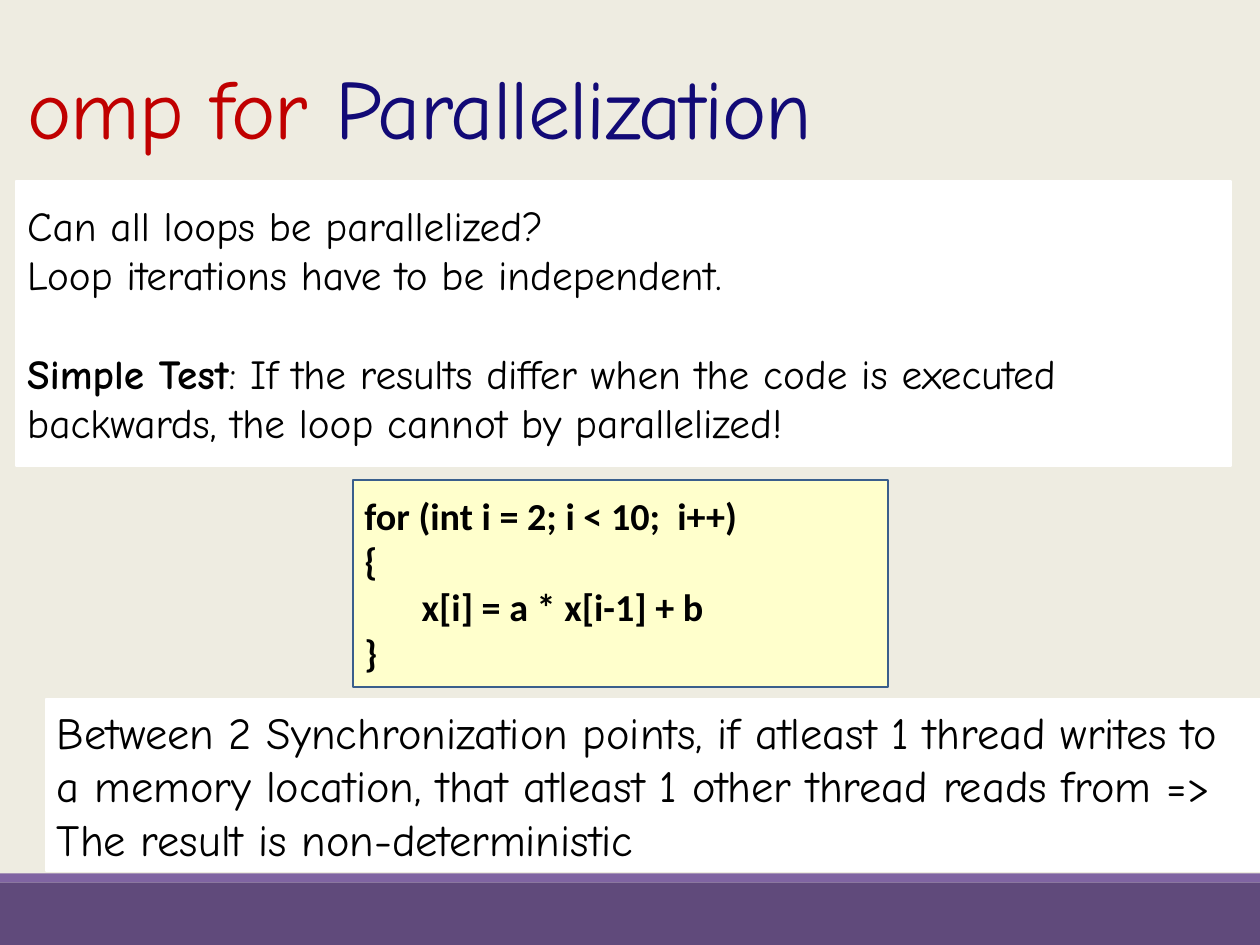
"""Build the slide on loops that omp for can parallelize."""
from pptx import Presentation
from pptx.dml.color import RGBColor
from pptx.enum.shapes import MSO_SHAPE
from pptx.enum.text import MSO_ANCHOR, MSO_AUTO_SIZE, PP_ALIGN
from pptx.util import Inches, Pt

RECT = MSO_SHAPE.RECTANGLE
MIDDLE = MSO_ANCHOR.MIDDLE
BOTTOM = MSO_ANCHOR.BOTTOM
LEFT = PP_ALIGN.LEFT
NO_FIT = MSO_AUTO_SIZE.NONE

CREAM = RGBColor(0xEE, 0xEC, 0xE1)
PURPLE = RGBColor(0x60, 0x4A, 0x7B)
LILAC = RGBColor(0x80, 0x64, 0xA2)
RED = RGBColor(0xC0, 0x00, 0x00)
NAVY = RGBColor(0x12, 0x0A, 0x76)
YELLOW = RGBColor(0xFF, 0xFF, 0xCC)
BLUE = RGBColor(0x3A, 0x5F, 0x8C)
WHITE = RGBColor(0xFF, 0xFF, 0xFF)
BLACK = RGBColor(0x00, 0x00, 0x00)

COMIC = "Comic Neue"
CODE = "Calibri"
CM = 1 / 2.54
WIDTH = 28 * CM
HEIGHT = 21 * CM


def style(run, face, size, color, bold=False):
    font = run.font
    font.name, font.size, font.bold = face, Pt(size), bold
    font.color.rgb = color


def add_box(slide, left, top, width, height, fill, line=None):
    box = slide.shapes.add_shape(
        RECT, Inches(left), Inches(top), Inches(width), Inches(height))
    box.shadow.inherit = False
    box.fill.solid()
    box.fill.fore_color.rgb = fill
    if line is None:
        box.line.fill.background()
    else:
        box.line.color.rgb = line
        box.line.width = Pt(1.25)
    return box


def add_text(box, lines, face, size, bold=False):
    frame = box.text_frame
    frame.word_wrap = True
    frame.vertical_anchor = MIDDLE
    frame.text = "\n".join(lines)
    for para in frame.paragraphs:
        para.alignment = LEFT
        for run in para.runs:
            style(run, face, size, BLACK, bold)
    return frame.paragraphs


def set_title(slide):
    title = slide.shapes.title
    title.left, title.top = Inches(0.14), Inches(0.24)
    title.width, title.height = Inches(9.95), Inches(1.18)
    frame = title.text_frame
    frame.auto_size = NO_FIT
    frame.vertical_anchor = BOTTOM
    para = frame.paragraphs[0]
    para.alignment = LEFT
    para.line_spacing = 0.85
    for text, color in (("omp for", RED), (" Parallelization", NAVY)):
        run = para.add_run()
        run.text = text
        style(run, COMIC, 52.9, color)
        run.font._element.set("spc", "-60")


def add_test(slide):
    box = add_box(slide, 0.14, 1.58, 10.63, 2.5, WHITE, WHITE)
    paras = add_text(box, [
        "Can all loops be parallelized?",
        "Loop iterations have to be independent.",
        "Simple Test",
    ], COMIC, 26)
    test = paras[-1]
    test.space_before = Pt(31)
    test.runs[0].font.bold = True
    rest = test.add_run()
    rest.text = (": If the results differ when the code is executed "
                 "backwards, the loop cannot by parallelized!")
    style(rest, COMIC, 26, BLACK)


def add_code(slide):
    box = add_box(slide, 3.09, 4.2, 4.68, 1.81, YELLOW, BLUE)
    paras = add_text(box, [
        "for (int i = 2; i < 10;  i++)",
        "{",
        "x[i] = a * x[i-1] + b",
        "}",
    ], CODE, 24, True)
    props = paras[2]._p.get_or_add_pPr()
    props.set("marL", str(Inches(0.5)))
    props.set("indent", "0")


def add_rule(slide):
    box = add_box(slide, 0.4, 6.12, 10.63, 1.5, WHITE, WHITE)
    add_text(box, [
        "Between 2 Synchronization points, if atleast 1 thread writes to "
        "a memory location, that atleast 1 other thread reads from => "
        "The result is non-deterministic",
    ], COMIC, 28)


def main():
    deck = Presentation()
    deck.slide_width, deck.slide_height = Inches(WIDTH), Inches(HEIGHT)
    slide = deck.slides.add_slide(deck.slide_layouts[5])
    back = slide.background.fill
    back.solid()
    back.fore_color.rgb = CREAM
    add_box(slide, 0, 7.72, WIDTH, 0.55, PURPLE)
    add_box(slide, 0, 7.64, WIDTH, 0.08, LILAC)
    set_title(slide)
    add_code(slide)
    add_test(slide)
    add_rule(slide)
    deck.save("out.pptx")


if __name__ == "__main__":
    main()
